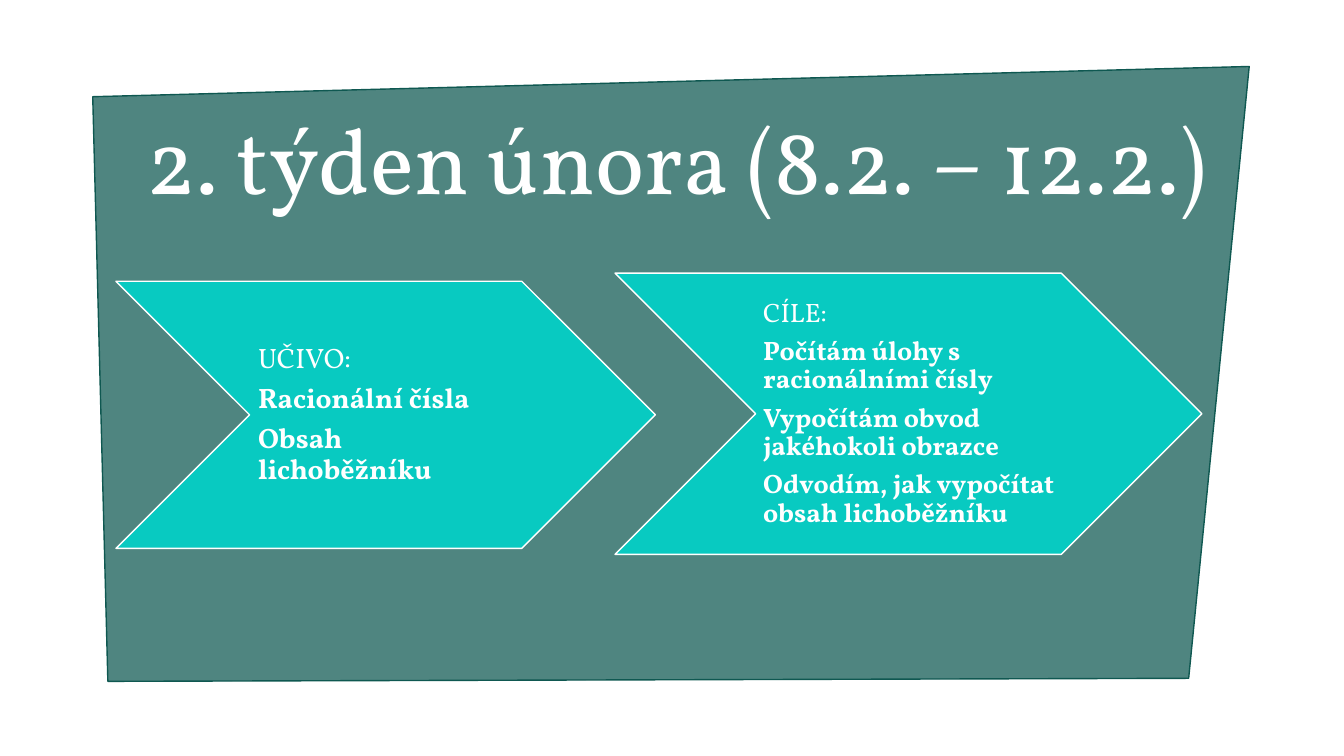
"""Builds the weekly plan slide with topics and goals in two chevrons."""
import pptx
import pptx.dml.color
import pptx.enum.shapes
import pptx.enum.text
import pptx.oxml.ns
import pptx.util
from lxml import etree

Inches = pptx.util.Inches
Pt = pptx.util.Pt
RGBColor = pptx.dml.color.RGBColor
Anchor = pptx.enum.text.MSO_ANCHOR

DARK_TEAL = RGBColor(0x0F, 0x58, 0x51)
TURQUOISE = RGBColor(0x08, 0xCA, 0xC1)
WHITE = RGBColor(0xFF, 0xFF, 0xFF)
FONT = "Vollkorn"
BACKDROP = [(1.07, 6.76), (0.92, 0.96), (12.39, 0.66), (11.79, 6.73)]


class WeekPage:
    def __init__(self, deck):
        self.page = deck.slides.add_slide(deck.slide_layouts[5])

    def paint(self, shape, fill, line):
        shape.shadow.inherit = False
        shape.fill.solid()
        shape.fill.fore_color.rgb = fill
        shape.line.color.rgb = line
        shape.line.width = Pt(1)

    def style(self, para, size, bold=False):
        para.line_spacing = 0.9
        para.font.name = FONT
        para.font.size = Pt(size)
        para.font.bold = bold
        para.font.color.rgb = WHITE

    def backdrop(self, points, opacity):
        corners = [(Inches(x), Inches(y)) for x, y in points]
        builder = self.page.shapes.build_freeform(*corners[0])
        builder.add_line_segments(corners[1:], close=True)
        shape = builder.convert_to_shape()
        self.paint(shape, DARK_TEAL, DARK_TEAL)
        tint = shape.fill._xPr.find(".//" + pptx.oxml.ns.qn("a:srgbClr"))
        etree.SubElement(tint, pptx.oxml.ns.qn("a:alpha"), val=str(opacity * 1000))
        tree = self.page.shapes._spTree
        tree.remove(shape._element)
        tree.insert(2, shape._element)

    def title(self, text, left, top, width, height):
        box = self.page.shapes.title
        box.left, box.top = Inches(left), Inches(top)
        box.width, box.height = Inches(width), Inches(height)
        frame = box.text_frame
        frame.text = text
        frame.auto_size = pptx.enum.text.MSO_AUTO_SIZE.NONE
        frame.vertical_anchor = Anchor.BOTTOM
        para = frame.paragraphs[0]
        para.alignment = pptx.enum.text.PP_ALIGN.CENTER
        self.style(para, 66)

    def chevron(self, left, top, width, height):
        shape = self.page.shapes.add_shape(
            pptx.enum.shapes.MSO_SHAPE.CHEVRON,
            Inches(left), Inches(top), Inches(width), Inches(height))
        self.paint(shape, TURQUOISE, WHITE)

    def text(self, lines, size, left, top, width, height):
        box = self.page.shapes.add_textbox(
            Inches(left), Inches(top), Inches(width), Inches(height))
        frame = box.text_frame
        frame.word_wrap = True
        frame.vertical_anchor = Anchor.MIDDLE
        frame.margin_left = Inches(0.08)
        frame.margin_right = frame.margin_top = frame.margin_bottom = Inches(0.03)
        frame.text = "\n".join(lines)
        for index, para in enumerate(frame.paragraphs):
            self.style(para, size, bold=index > 0)
            para.space_after = Pt(size * 0.35)


def main():
    deck = pptx.Presentation()
    deck.slide_width, deck.slide_height = Inches(13.33), Inches(7.5)
    week = WeekPage(deck)
    week.backdrop(BACKDROP, 73)
    week.title("2. týden února (8.2. – 12.2.)", 1, 1, 11.42, 1.18)
    topics = ["UČIVO:", "Racionální čísla", "Obsah lichoběžníku"]
    goals = ["CÍLE:", "Počítám úlohy s racionálními čísly",
             "Vypočítám obvod jakéhokoli obrazce",
             "Odvodím, jak vypočítat obsah lichoběžníku"]
    for lines, size, left, top, width, height, text_left, text_width in (
            (topics, 20, 1.15, 2.79, 5.35, 2.65, 2.48, 2.7),
            (goals, 19, 6.1, 2.71, 5.82, 2.79, 7.49, 3.03)):
        week.chevron(left, top, width, height)
        week.text(lines, size, text_left, top, text_width, height)
    deck.save("out.pptx")


if __name__ == "__main__":
    main()
